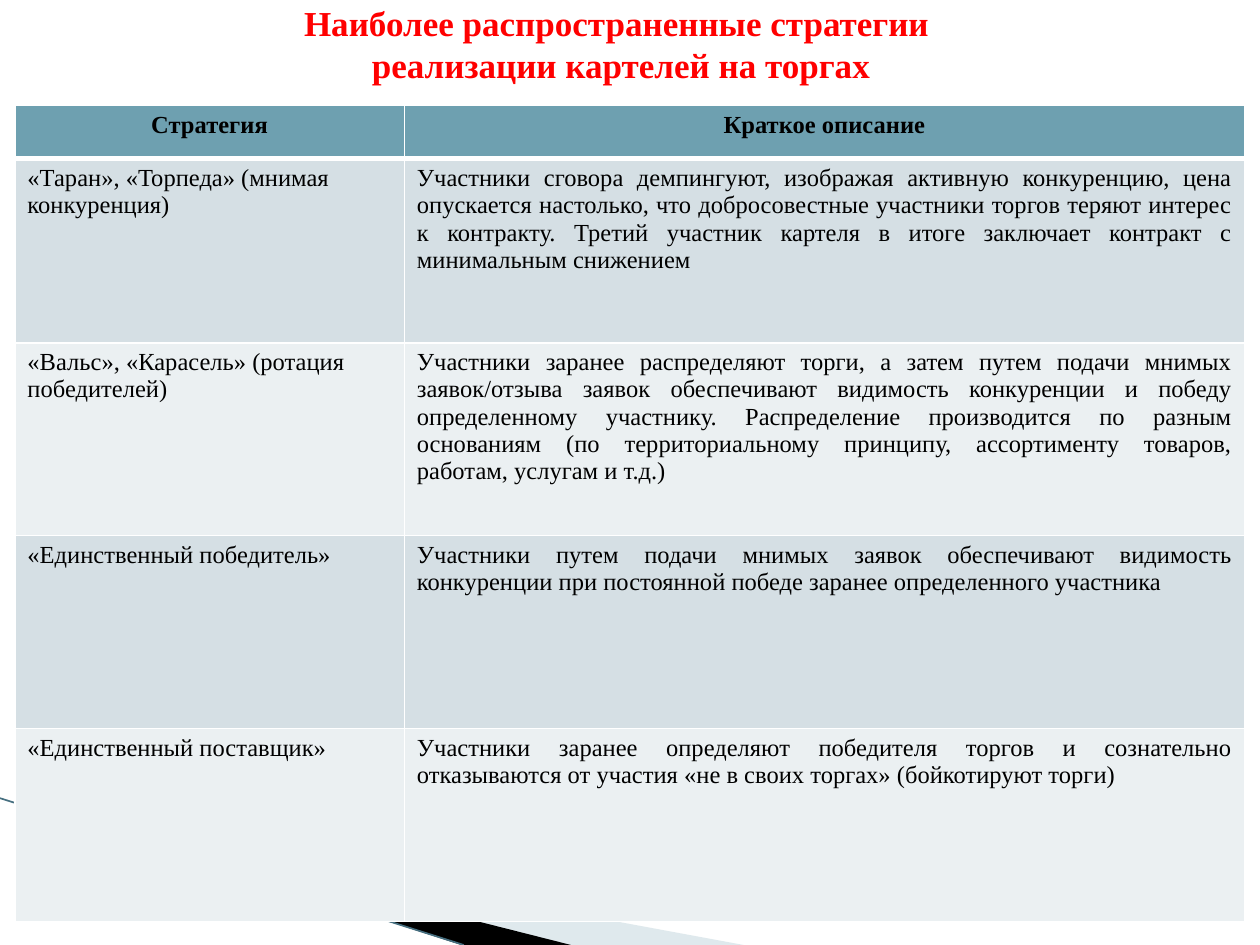
from pptx import Presentation
from pptx.dml.color import RGBColor
from pptx.enum.shapes import MSO_CONNECTOR as Connector
from pptx.enum.text import MSO_ANCHOR as Anchor, PP_ALIGN as Align
from pptx.oxml.ns import qn
from pptx.util import Cm, Pt
from lxml.etree import SubElement

FONT = "Times New Roman"
HEADER_FILL = "6EA0B0"
BAND_FILLS = ["D5DFE4", "EBF0F2"]
COLUMN_WIDTHS = [7.85, 16.94]
ROW_HEIGHTS = [1.07, 3.71, 3.89, 3.89, 3.89]
TITLE = "Наиболее распространенные стратегии \vреализации картелей на торгах"
ROWS = [
    ("Стратегия", "Краткое описание"),
    ("«Таран», «Торпеда» (мнимая конкуренция)",
     "Участники сговора демпингуют, изображая активную конкуренцию, цена опускается "
     "настолько, что добросовестные участники торгов теряют интерес к контракту. Третий "
     "участник картеля в итоге заключает контракт с минимальным снижением"),
    ("«Вальс», «Карасель» (ротация победителей)",
     "Участники заранее распределяют торги, а затем путем подачи мнимых заявок/отзыва "
     "заявок обеспечивают видимость конкуренции и победу определенному участнику. "
     "Распределение производится по разным основаниям (по территориальному принципу, "
     "ассортименту товаров, работам, услугам и т.д.)"),
    ("«Единственный победитель»",
     "Участники путем подачи мнимых заявок обеспечивают видимость конкуренции при "
     "постоянной победе заранее определенного участника"),
    ("«Единственный поставщик»",
     "Участники заранее определяют победителя торгов и сознательно отказываются от "
     "участия «не в своих торгах» (бойкотируют торги)"),
]


def color(value):
    return RGBColor.from_string(value)


def format_text(para, size, value, bold, align):
    para.alignment = align
    for span in para.runs:
        span.font.name = FONT
        span.font.size = Pt(size)
        span.font.bold = bold
        span.font.color.rgb = color(value)


def add_wedge(page, left, top, points, value, alpha=None):
    """Draw a filled outline; points are offsets in cm from left, top."""
    corners = [(Cm(left + x), Cm(top + y)) for x, y in points]
    builder = page.shapes.build_freeform(*corners[0])
    builder.add_line_segments(corners[1:], close=True)
    wedge = builder.convert_to_shape()
    wedge.shadow.inherit = False
    wedge.fill.solid()
    wedge.fill.fore_color.rgb = color(value)
    wedge.line.fill.background()
    if alpha is not None:
        tint = wedge._element.spPr.find(qn("a:solidFill"))[0]
        SubElement(tint, qn("a:alpha"), val=str(alpha * 1000))


def add_corner_decoration(page, left, top, width, height):
    add_wedge(page, left, top, [(1.4, 0.45), (width, height), (11.48, height)], "B1C9D2", 40)
    add_wedge(page, left, top, [(1.35, 0.39), (11.51, height), (9.3, height)], "000000")
    edge = page.shapes.add_connector(
        Connector.STRAIGHT, Cm(left), Cm(top), Cm(left + 9.35), Cm(top + height))
    edge.line.color.rgb = color("466F80")
    edge.line.width = Pt(0.95)
    SubElement(edge._element.spPr, qn("a:effectLst"))


def add_title(page, left, top, width, height):
    box = page.shapes.add_textbox(Cm(left), Cm(top), Cm(width), Cm(height))
    frame = box.text_frame
    frame.word_wrap = True
    frame.vertical_anchor = Anchor.MIDDLE
    frame.text = TITLE
    format_text(frame.paragraphs[0], 20, "FF0000", True, Align.CENTER)


def add_borders(cell, bottom):
    properties = cell._tc.get_or_add_tcPr()
    for side, width in (("L", 1), ("R", 1), ("T", 1), ("B", bottom)):
        line = SubElement(properties, qn(f"a:ln{side}"), w=str(Pt(width)))
        fill = SubElement(line, qn("a:solidFill"))
        SubElement(fill, qn("a:srgbClr"), val="FFFFFF")


def add_strategy_table(page, left, top):
    table = page.shapes.add_table(
        len(ROWS), len(COLUMN_WIDTHS), Cm(left), Cm(top),
        Cm(sum(COLUMN_WIDTHS)), Cm(sum(ROW_HEIGHTS))).table
    for column, width in zip(table.columns, COLUMN_WIDTHS):
        column.width = Cm(width)
    for r, (texts, height) in enumerate(zip(ROWS, ROW_HEIGHTS)):
        table.rows[r].height = Cm(height)
        header = r == 0
        aligns = [Align.CENTER] * 2 if header else [Align.LEFT, Align.JUSTIFY]
        for c, text in enumerate(texts):
            cell = table.cell(r, c)
            cell.text_frame.text = text
            format_text(cell.text_frame.paragraphs[0], 14, "000000", header, aligns[c])
            add_borders(cell, 3 if header else 1)
            cell.fill.solid()
            cell.fill.fore_color.rgb = color(HEADER_FILL if header else BAND_FILLS[(r - 1) % 2])


def main():
    deck = Presentation()
    deck.slide_width, deck.slide_height = Cm(25.4), Cm(19.05)
    page = deck.slides.add_slide(deck.slide_layouts[6])
    add_corner_decoration(page, 0, 16.09, 14.99, 2.96)
    add_title(page, 1.09, 0, 22.86, 1.75)
    add_strategy_table(page, 0.3, 2.13)
    deck.save("out.pptx")


if __name__ == "__main__":
    main()
